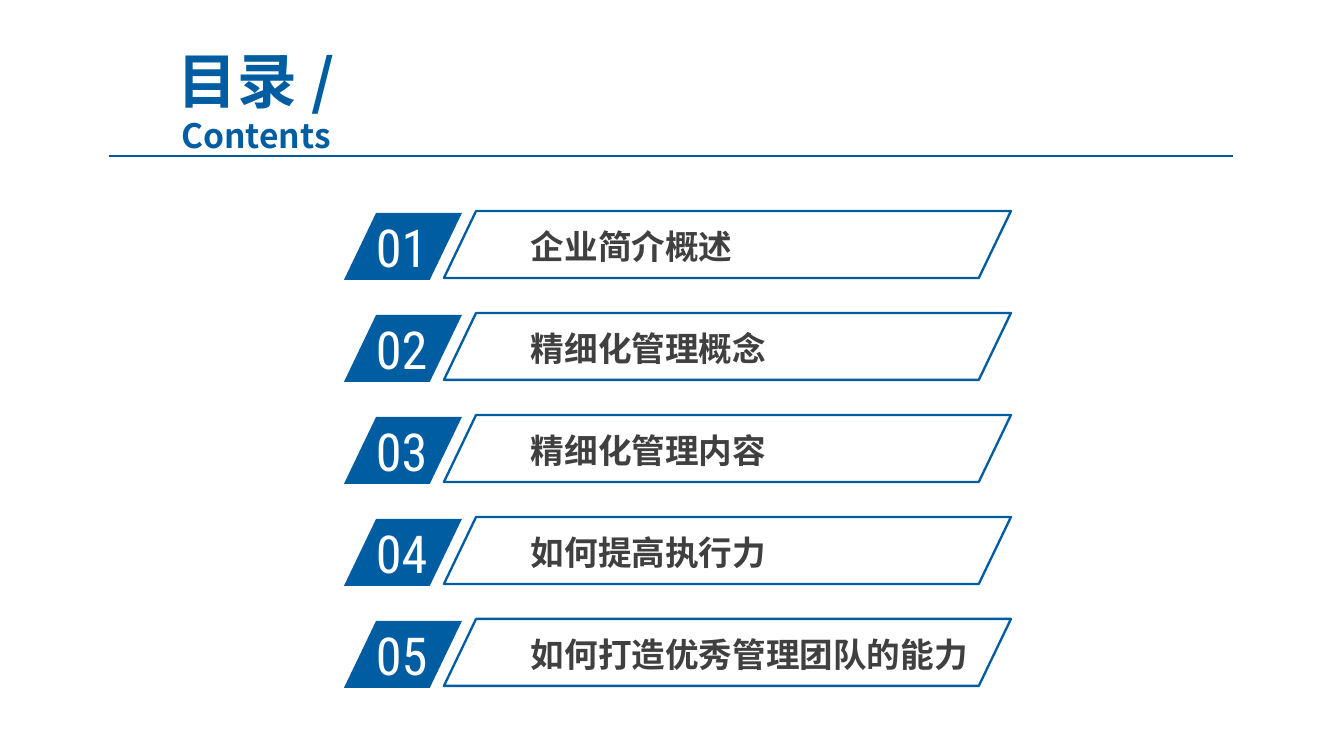
from lxml.etree import SubElement
from pptx import Presentation
from pptx.dml.color import RGBColor
from pptx.enum.shapes import MSO_CONNECTOR, MSO_SHAPE
from pptx.enum.text import MSO_ANCHOR, MSO_AUTO_SIZE, PP_ALIGN
from pptx.oxml.ns import qn
from pptx.util import Pt

EMU_PER_PX = 914400 / 134.4
COLORS = {"blue": "005DA2", "rule": "005B9E", "text": "404040", "white": "FFFFFF"}
CJK = "Noto Sans CJK SC"
TITLE = {"name": CJK, "size": Pt(32), "bold": True}
SUBTITLE = {**TITLE, "size": Pt(18)}
NUMBER = {"name": "Roboto Condensed", "size": Pt(28), "bold": False}
ENTRY = {"name": CJK, "size": Pt(18), "bold": True}

ENTRIES = [
    "企业简介概述",
    "精细化管理概念",
    "精细化管理内容",
    "如何提高执行力",
    "如何打造优秀管理团队的能力",
]
ENTRY_TOP, ENTRY_PITCH = 211, 102


def px(n):
    return round(n * EMU_PER_PX)


def rgb(name):
    return RGBColor.from_string(COLORS[name])


def add_run(p, text, style, color):
    r = p.add_run()
    r.text = text
    for key, value in style.items():
        setattr(r.font, key, value)
    r.font.color.rgb = rgb(color)
    # East Asian text takes its typeface from a separate element
    SubElement(r.font._element, qn("a:ea"), typeface=style["name"])


def set_title(s):
    sp = s.shapes.title
    sp.left, sp.top, sp.width, sp.height = map(px, (90, 63, 332, 73))
    tf = sp.text_frame
    tf.word_wrap = True
    tf.auto_size = MSO_AUTO_SIZE.NONE
    tf.vertical_anchor = MSO_ANCHOR.MIDDLE
    p = tf.paragraphs[0]
    p.alignment = PP_ALIGN.CENTER
    add_run(p, "目录 /", TITLE, "blue")
    p.add_line_break()
    add_run(p, "Contents", SUBTITLE, "blue")


def add_rule(s, left, right, y):
    line = s.shapes.add_connector(
        MSO_CONNECTOR.STRAIGHT, px(left), px(y), px(right), px(y))
    line.line.color.rgb = rgb("rule")
    line.line.width = Pt(0.75)
    SubElement(line._element.spPr, qn("a:effectLst"))


def add_parallelogram(s, *box, filled):
    sp = s.shapes.add_shape(MSO_SHAPE.PARALLELOGRAM, *map(px, box))
    sp.adjustments[0] = 0.48
    sp.shadow.inherit = False
    if filled:
        sp.fill.solid()
        sp.fill.fore_color.rgb = rgb("blue")
        sp.line.fill.background()
    else:
        sp.fill.background()
        sp.line.color.rgb = rgb("blue")
        sp.line.width = Pt(1.25)


def add_text(s, text, *box, style, color, inset):
    tf = s.shapes.add_textbox(*map(px, box)).text_frame
    tf.word_wrap = True
    tf.margin_left = tf.margin_right = px(inset[0])
    tf.margin_top = tf.margin_bottom = px(inset[1])
    add_run(tf.paragraphs[0], text, style, color)


def add_entry(s, number, text, top):
    add_parallelogram(s, 344, top + 2, 118, 67, filled=True)
    add_text(s, f"{number:02}", 363, top - 3, 113, 66,
             style=NUMBER, color="white", inset=(13, 7))
    add_text(s, text, 521, top + 10, 489, 51,
             style=ENTRY, color="text", inset=(10, 5))
    add_parallelogram(s, 444, top, 567, 67, filled=False)


def main():
    prs = Presentation()
    prs.slide_width, prs.slide_height = px(1344), px(756)
    s = prs.slides.add_slide(prs.slide_layouts[5])
    set_title(s)
    add_rule(s, 109, 1233, 156)
    for i, text in enumerate(ENTRIES):
        add_entry(s, i + 1, text, ENTRY_TOP + i * ENTRY_PITCH)
    prs.save("out.pptx")


if __name__ == "__main__":
    main()
